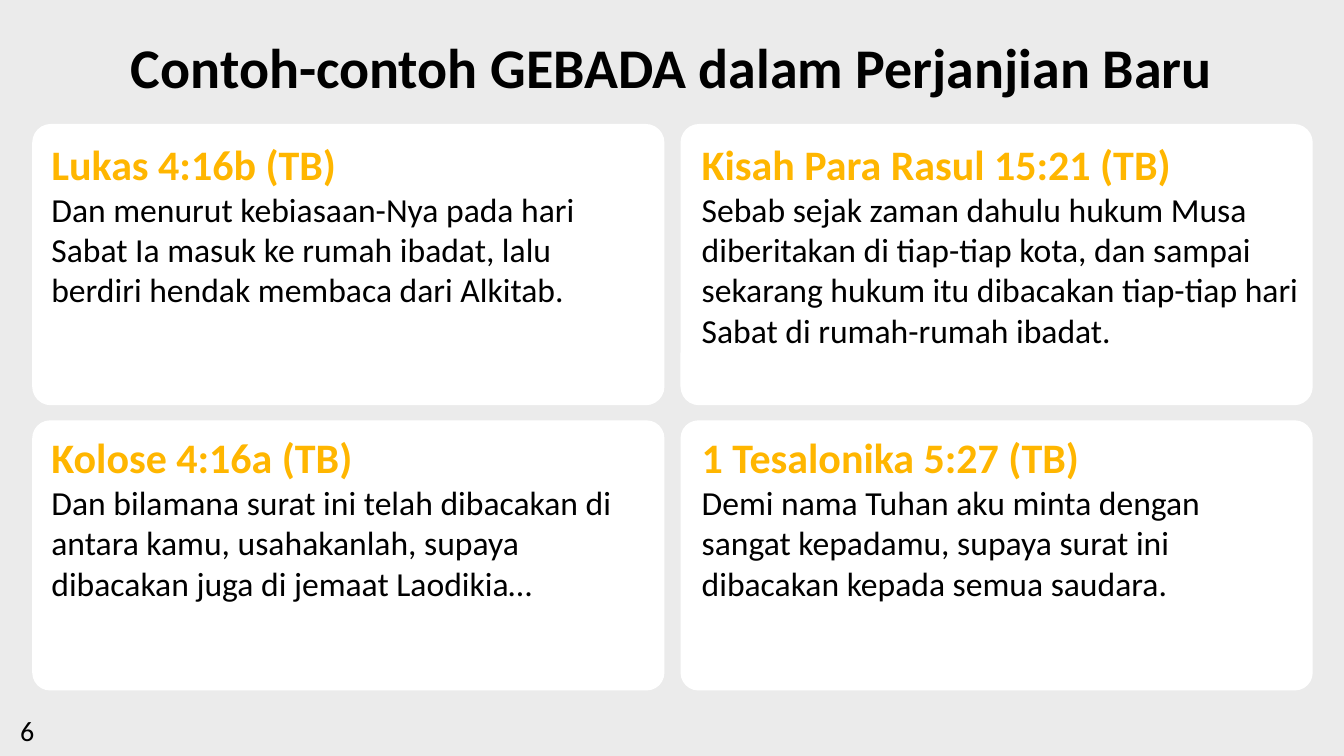
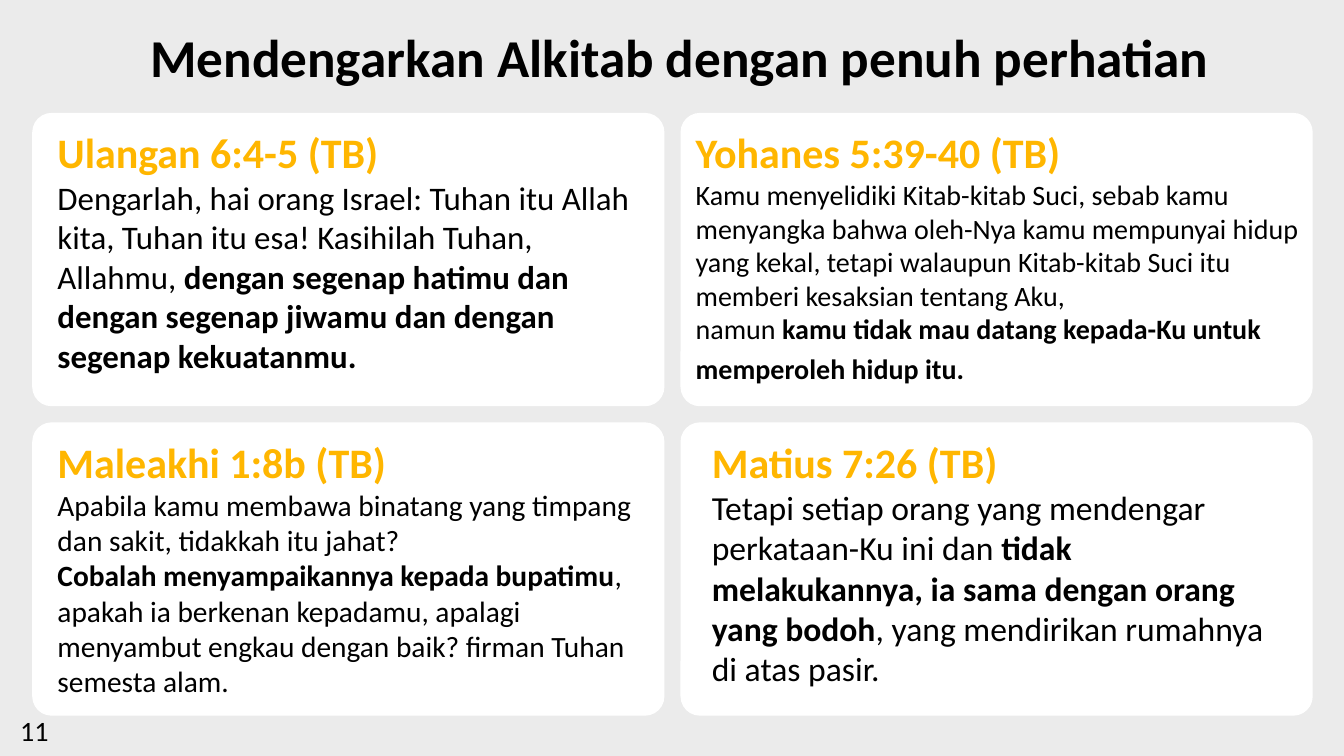
"""Build two slides of Bible verses, four rounded cards on each."""
from pptx import Presentation
from pptx import util as u
from pptx.dml.color import RGBColor
from pptx.enum import shapes, text

COLORS = {"back": "EBEBEB", "card": "FFFFFF", "heading": "FFB600", "body": "000000"}
FONT = "Calibri"
CARD_LEFTS = (0.32, 6.75)
CARD_WIDTH = 6.27

SLIDES = [
    {
        "number": "6",
        "title": "Contoh-contoh GEBADA dalam Perjanjian Baru",
        "title_box": (0.25, 0.32, 12.82, 0.67),
        "title_size": 40,
        "rows": [(1.23, 2.79), (4.17, 2.68)],
        "verses": [
            ("Lukas 4:16b (TB)", (0.51, 1.37, 5.93, 1.72), [
                ("Dan menurut kebiasaan-Nya pada hari Sabat Ia masuk ke rumah ibadat, "
                 "lalu berdiri hendak membaca dari Alkitab.", 24, False)]),
            ("Kisah Para Rasul 15:21 (TB)", (6.96, 1.37, 6.06, 2.52), [
                ("Sebab sejak zaman dahulu hukum Musa diberitakan di tiap-tiap kota, dan "
                 "sampai sekarang hukum itu dibacakan tiap-tiap hari Sabat di rumah-rumah "
                 "ibadat.", 24, False)]),
            ("Kolose 4:16a (TB)", (0.51, 4.28, 5.79, 2.12), [
                ("Dan bilamana surat ini telah dibacakan di antara kamu, usahakanlah, "
                 "supaya dibacakan juga di jemaat Laodikia…", 24, False)]),
            ("1 Tesalonika 5:27 (TB)", (6.96, 4.28, 5.86, 1.72), [
                ("Demi nama Tuhan aku minta dengan sangat kepadamu, supaya surat ini "
                 "dibacakan kepada semua saudara.", 24, False)]),
        ],
    },
    {
        "number": "11",
        "title": "Mendengarkan Alkitab dengan penuh perhatian",
        "title_box": (0, 0.24, 13.49, 0.64),
        "title_size": 38,
        "rows": [(1.12, 2.91), (4.19, 2.91)],
        "verses": [
            ("Ulangan 6:4-5 (TB)", (0.57, 1.26, 5.86, 2.48), [
                ("Dengarlah, hai orang Israel: Tuhan itu Allah kita, Tuhan itu esa! "
                 "Kasihilah Tuhan, Allahmu, ", 23.5, False),
                ("dengan segenap hatimu dan dengan segenap jiwamu dan dengan segenap "
                 "kekuatanmu.", 23.5, True)]),
            ("Yohanes 5:39-40 (TB)", (6.9, 1.26, 6, 2.59), [
                ("Kamu menyelidiki Kitab-kitab Suci, sebab kamu menyangka bahwa oleh-Nya "
                 "kamu mempunyai hidup yang kekal, tetapi walaupun Kitab-kitab Suci itu "
                 "memberi kesaksian tentang Aku,\nnamun ", 20, False),
                ("kamu tidak mau datang kepada-Ku untuk memperoleh hidup itu.", 20, True),
                (" ", 24, False)]),
            ("Maleakhi 1:8b (TB)", (0.57, 4.33, 5.75, 2.63), [
                ("Apabila kamu membawa binatang yang timpang dan sakit, tidakkah itu "
                 "jahat?\n", 21, False),
                ("Cobalah menyampaikannya kepada bupatimu", 21, True),
                (", apakah ia berkenan kepadamu, apalagi menyambut engkau dengan baik? "
                 "firman Tuhan semesta alam.", 21, False)]),
            ("Matius 7:26 (TB)", (7.06, 4.33, 5.68, 2.61), [
                ("Tetapi setiap orang yang mendengar perkataan-Ku ini dan ", 24, False),
                ("tidak melakukannya, ia sama dengan orang yang bodoh", 24, True),
                (", yang mendirikan rumahnya di atas pasir.", 24, False)]),
        ],
    },
]


def add_run(p, words, size, bold=False, color="body"):
    for i, line in enumerate(words.split("\n")):
        if i:
            p.add_line_break()
        if line:
            r = p.add_run()
            r.text = line
            r.font.name = FONT
            r.font.size = u.Pt(size)
            r.font.bold = bold
            r.font.color.rgb = RGBColor.from_string(COLORS[color])


def set_frame(sp, box):
    sp.left, sp.top, sp.width, sp.height = [u.Inches(v) for v in box]
    tf = sp.text_frame
    tf.margin_left = tf.margin_top = tf.margin_right = tf.margin_bottom = 0
    tf.word_wrap = True
    tf.auto_size = text.MSO_AUTO_SIZE.NONE
    tf.vertical_anchor = text.MSO_ANCHOR.TOP
    return tf


prs = Presentation()
prs.slide_width, prs.slide_height = u.Inches(13.33), u.Inches(7.5)
back = prs.slide_master.background.fill
back.solid()
back.fore_color.rgb = RGBColor.from_string(COLORS["back"])

for page in SLIDES:
    s = prs.slides.add_slide(prs.slide_layouts[5])
    p = set_frame(s.shapes.title, page["title_box"]).paragraphs[0]
    p.alignment = text.PP_ALIGN.CENTER
    add_run(p, page["title"], page["title_size"], True)

    for top, height in page["rows"]:
        for left in CARD_LEFTS:
            sp = s.shapes.add_shape(
                shapes.MSO_SHAPE.ROUNDED_RECTANGLE, u.Inches(left), u.Inches(top),
                u.Inches(CARD_WIDTH), u.Inches(height))
            sp.adjustments[0] = 0.066
            sp.shadow.inherit = False
            sp.fill.solid()
            sp.fill.fore_color.rgb = RGBColor.from_string(COLORS["card"])
            sp.line.fill.background()

    for heading, box, runs in page["verses"]:
        tf = set_frame(s.shapes.add_textbox(0, 0, 0, 0), box)
        add_run(tf.paragraphs[0], heading, 30, True, "heading")
        p = tf.add_paragraph()
        for words, size, bold in runs:
            add_run(p, words, size, bold)

    tf = set_frame(s.shapes.add_textbox(0, 0, 0, 0), (0.2, 7.08, 1.11, 0.34))
    add_run(tf.paragraphs[0], page["number"], 20)

prs.save("out.pptx")
